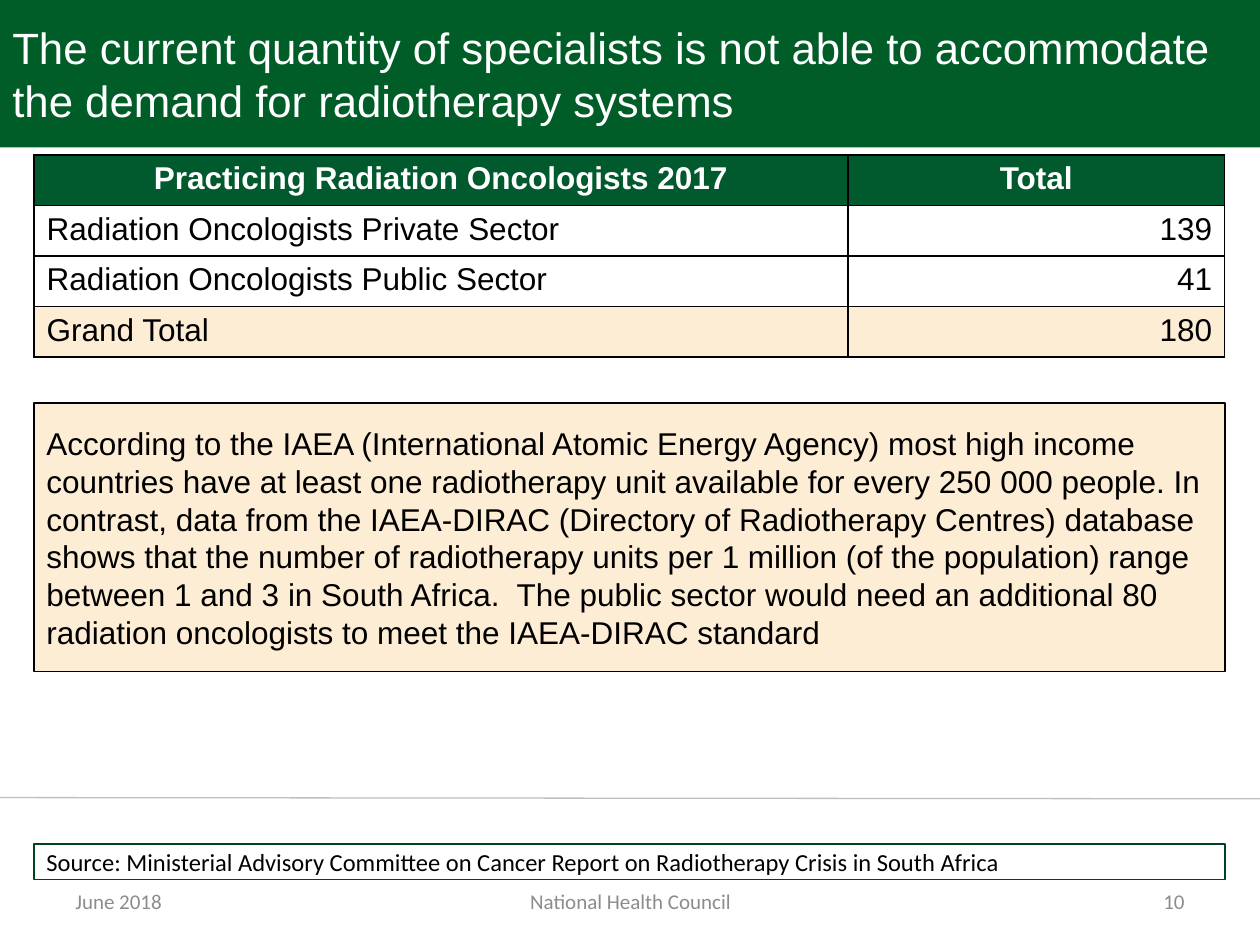
from dataclasses import dataclass

from lxml import etree
from pptx import Presentation
from pptx.dml.color import RGBColor
from pptx.enum.shapes import MSO_CONNECTOR, MSO_SHAPE
from pptx.enum.text import MSO_ANCHOR, PP_ALIGN
from pptx.oxml.ns import qn
from pptx.util import Inches, Pt

RECT = MSO_SHAPE.RECTANGLE
STRAIGHT = MSO_CONNECTOR.STRAIGHT
MIDDLE = MSO_ANCHOR.MIDDLE
LEFT, CENTER, RIGHT = PP_ALIGN.LEFT, PP_ALIGN.CENTER, PP_ALIGN.RIGHT


@dataclass(frozen=True)
class Theme:
    head: str = "Arial"
    foot: str = "Calibri"
    title: int = 25
    body: int = 18
    source: int = 14
    small: int = 12
    green: str = "005D28"
    forest: str = "005A2E"
    edge: str = "004322"
    cream: str = "FDEDD5"
    white: str = "FFFFFF"
    black: str = "000000"
    gray: str = "8C8C8C"
    rule: str = "BFBFBF"


def rgb(color):
    return RGBColor.from_string(color)


class Deck:
    def __init__(self, slide, theme):
        self.slide = slide
        self.theme = theme

    def text(self, frame, words, size, color, font, align=LEFT, bold=False):
        frame.word_wrap = True
        para = frame.paragraphs[0]
        para.text = words
        para.alignment = align
        para.font.name = font
        para.font.size = Pt(size)
        para.font.bold = bold
        para.font.color.rgb = rgb(color)

    def panel(self, box, words, size, color, font, fill, line=None):
        shape = self.slide.shapes.add_shape(RECT, *map(Inches, box))
        shape.shadow.inherit = False
        shape.fill.solid()
        shape.fill.fore_color.rgb = rgb(fill)
        if line:
            shape.line.color.rgb = rgb(line)
            shape.line.width = Pt(1)
        else:
            shape.line.fill.background()
        shape.text_frame.vertical_anchor = MIDDLE
        self.text(shape.text_frame, words, size, color, font)

    def label(self, box, words, align):
        frame = self.slide.shapes.add_textbox(*map(Inches, box)).text_frame
        frame.vertical_anchor = MIDDLE
        self.text(frame, words, self.theme.small, self.theme.gray,
                  self.theme.foot, align)

    def line(self, start, end, color, width):
        rule = self.slide.shapes.add_connector(
            STRAIGHT, *map(Inches, start + end))
        rule.line.color.rgb = rgb(color)
        rule.line.width = Pt(width)
        etree.SubElement(rule._element.spPr, qn("a:effectLst"))

    def border(self, cell):
        props = cell._tc.get_or_add_tcPr()
        for index, side in enumerate(("lnL", "lnR", "lnT", "lnB")):
            edge = etree.Element(qn(f"a:{side}"), w=str(Pt(1)))
            fill = etree.SubElement(edge, qn("a:solidFill"))
            etree.SubElement(fill, qn("a:srgbClr"), val=self.theme.black)
            props.insert(index, edge)

    def table(self, left, top, widths, height, rows):
        look = self.theme
        last = len(rows) - 1
        table = self.slide.shapes.add_table(
            len(rows), len(widths), Inches(left), Inches(top),
            Inches(sum(widths)), Inches(height * len(rows))).table
        for col, width in zip(table.columns, widths):
            col.width = Inches(width)
        for r, row in enumerate(rows):
            table.rows[r].height = Inches(height)
            first = r == 0
            fill = {0: look.forest, last: look.cream}.get(r, look.white)
            color = look.white if first else look.black
            for c, words in enumerate(row):
                cell = table.cell(r, c)
                cell.fill.solid()
                cell.fill.fore_color.rgb = rgb(fill)
                align = CENTER if first else (LEFT, RIGHT)[c]
                self.text(cell.text_frame, words, look.body, color,
                          look.head, align, first)
                self.border(cell)


def main():
    show = Presentation()
    show.slide_width, show.slide_height = Inches(10), Inches(7.5)
    look = Theme()
    deck = Deck(show.slides.add_slide(show.slide_layouts[6]), look)
    left, width = 0.27, 9.45

    deck.line((0, 6.33), (10, 6.34), look.rule, 0.75)
    deck.panel(
        (0, 0, 10, 1.17),
        "The current quantity of specialists is not able to accommodate "
        "the demand for radiotherapy systems",
        look.title, look.white, look.head, look.green)
    deck.label((0.5, 6.95, 2.33, 0.4), "June 2018", LEFT)
    deck.label((3.42, 6.95, 3.17, 0.4), "National Health Council", CENTER)
    deck.label((7.17, 6.95, 2.33, 0.4), "10", RIGHT)
    deck.panel(
        (left, 3.2, width, 2.13),
        "According to the IAEA (International Atomic Energy Agency) most "
        "high income countries have at least one radiotherapy unit available "
        "for every 250 000 people. In contrast, data from the IAEA-DIRAC "
        "(Directory of Radiotherapy Centres) database shows that the number "
        "of radiotherapy units per 1 million (of the population) range "
        "between 1 and 3 in South Africa.  The public sector would need an "
        "additional 80 radiation oncologists to meet the IAEA-DIRAC standard",
        look.body, look.black, look.head, look.cream, look.black)
    deck.panel(
        (left, 6.7, width, 0.28),
        "Source: Ministerial Advisory Committee on Cancer Report on "
        "Radiotherapy Crisis in South Africa",
        look.source, look.black, look.foot, look.white, look.edge)
    deck.table(left, 1.23, (6.46, 2.99), 0.39, (
        ("Practicing Radiation Oncologists 2017", "Total"),
        ("Radiation Oncologists Private Sector", "139"),
        ("Radiation Oncologists Public Sector", "41"),
        ("Grand Total", "180"),
    ))
    show.save("out.pptx")


if __name__ == "__main__":
    main()
